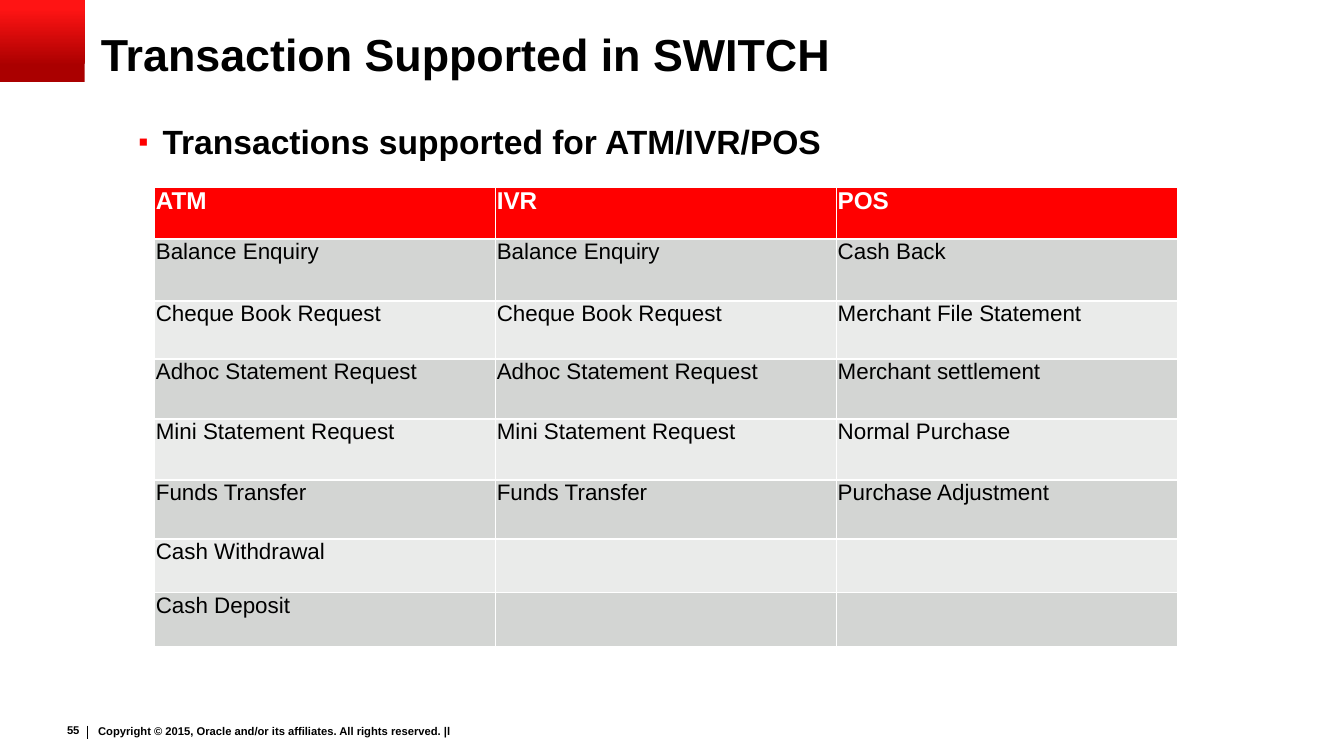
from dataclasses import dataclass

from lxml import etree
from pptx import Presentation
from pptx.dml.color import RGBColor
from pptx.enum.shapes import MSO_CONNECTOR as Connector, MSO_SHAPE as Preset
from pptx.enum.text import MSO_ANCHOR as Anchor, PP_ALIGN as Align
from pptx.oxml.ns import qn
from pptx.util import Inches, Pt


@dataclass(frozen=True)
class Theme:
    font: str = "Arial"
    text: str = "000000"
    white: str = "FFFFFF"
    accent: str = "FF0000"
    corner_dark: str = "AA0000"
    corner_bright: str = "FF1414"
    band_dark: str = "D3D5D3"
    band_light: str = "EAEBEA"
    title_size: float = 24
    body_size: float = 18
    header_size: float = 13
    cell_size: float = 12
    footer_size: float = 6


@dataclass(frozen=True)
class Box:
    left: float
    top: float
    width: float
    height: float

    def lengths(self):
        return [Inches(value) for value in (self.left, self.top, self.width, self.height)]


@dataclass(frozen=True)
class TableRow:
    height: float
    cells: tuple


THEME = Theme()
ROWS = (
    TableRow(0.39, ("ATM", "IVR", "POS")),
    TableRow(0.46, ("Balance Enquiry", "Balance Enquiry", "Cash Back")),
    TableRow(0.43, ("Cheque Book Request", "Cheque Book Request", "Merchant File Statement")),
    TableRow(0.45, ("Adhoc Statement Request", "Adhoc Statement Request", "Merchant settlement")),
    TableRow(0.45, ("Mini Statement Request", "Mini Statement Request", "Normal Purchase")),
    TableRow(0.44, ("Funds Transfer", "Funds Transfer", "Purchase Adjustment")),
    TableRow(0.4, ("Cash Withdrawal", "", "")),
    TableRow(0.4, ("Cash Deposit", "", "")),
)


def write_text(frame, text: str, *, size: float, color: str = THEME.text, bold: bool = True,
               align=Align.LEFT, line_spacing: float = 1.0, bullet: str = ""):
    paragraph = frame.paragraphs[0]
    paragraph.text = text
    paragraph.alignment = align
    paragraph.line_spacing = line_spacing
    if bullet:
        add_bullet(paragraph, bullet)
    font = paragraph.font
    font.name = THEME.font
    font.size = Pt(size)
    font.bold = bold
    font.color.rgb = RGBColor.from_string(color)
    return paragraph


def add_bullet(paragraph, character: str) -> None:
    properties = paragraph._p.get_or_add_pPr()
    properties.set("marL", str(Inches(0.25)))
    properties.set("indent", str(Inches(-0.18)))
    color = etree.SubElement(properties, qn("a:buClr"))
    etree.SubElement(color, qn("a:srgbClr"), val=THEME.accent)
    etree.SubElement(properties, qn("a:buSzPct"), val="85000")
    etree.SubElement(properties, qn("a:buFont"), typeface=THEME.font)
    etree.SubElement(properties, qn("a:buChar"), char=character)


def add_text(slide, box: Box, text: str, *, insets: tuple = (0, 0), anchor=Anchor.TOP,
             wrap: bool = True, **text_format):
    frame = slide.shapes.add_textbox(*box.lengths()).text_frame
    frame.word_wrap = wrap
    frame.vertical_anchor = anchor
    frame.margin_left = frame.margin_right = Inches(insets[0])
    frame.margin_top = frame.margin_bottom = Inches(insets[1])
    return write_text(frame, text, **text_format)


def add_corner(slide, box: Box) -> None:
    shape = slide.shapes.add_shape(Preset.RECTANGLE, *box.lengths())
    shape.shadow.inherit = False
    shape.line.fill.background()
    shape.fill.gradient()
    shape.fill.gradient_angle = 90
    stops = ((0.2, THEME.corner_dark), (0.9, THEME.corner_bright))
    for stop, (position, color) in zip(shape.fill.gradient_stops, stops):
        stop.position = position
        stop.color.rgb = RGBColor.from_string(color)


def add_divider(slide, x: float, top: float, bottom: float) -> None:
    line = slide.shapes.add_connector(
        Connector.STRAIGHT, Inches(x), Inches(top), Inches(x), Inches(bottom))
    line.line.color.rgb = RGBColor.from_string(THEME.text)
    line.line.width = Pt(0.5)
    etree.SubElement(line._element.spPr, qn("a:effectLst"))


def set_borders(cell, widths: dict) -> None:
    properties = cell._tc.get_or_add_tcPr()
    for side, width in widths.items():
        border = etree.SubElement(properties, qn(f"a:ln{side}"), w=str(Pt(width)))
        fill = etree.SubElement(border, qn("a:solidFill"))
        etree.SubElement(fill, qn("a:srgbClr"), val=THEME.white)


def add_table(slide, box: Box, rows: tuple) -> None:
    column_count = len(rows[0].cells)
    table = slide.shapes.add_table(len(rows), column_count, *box.lengths()).table
    for column in table.columns:
        column.width = Inches(box.width / column_count)
    for row_index, row in enumerate(rows):
        table.rows[row_index].height = Inches(row.height)
        header = row_index == 0
        band = THEME.band_dark if row_index % 2 else THEME.band_light
        for column_index, text in enumerate(row.cells):
            cell = table.cell(row_index, column_index)
            cell.margin_left = cell.margin_right = Inches(0.01)
            cell.margin_top = Inches(0.02)
            cell.margin_bottom = 0
            set_borders(cell, {"L": 1, "R": 1, "T": 1.5 if row_index == 1 else 1,
                               "B": 1.5 if header else 1})
            cell.fill.solid()
            cell.fill.fore_color.rgb = RGBColor.from_string(THEME.accent if header else band)
            write_text(cell.text_frame, text, bold=header, line_spacing=0.9,
                       size=THEME.header_size if header else THEME.cell_size,
                       color=THEME.white if header else THEME.text)


def main() -> None:
    presentation = Presentation()
    presentation.slide_width = Inches(10)
    presentation.slide_height = Inches(10 * 9 / 16)
    slide = presentation.slides.add_slide(presentation.slide_layouts[6])

    add_text(slide, Box(0.69, 5.37, 4.55, 0.24),
             "Copyright © 2015, Oracle and/or its affiliates. All rights reserved. |l",
             insets=(0.04, 0.02), size=THEME.footer_size)
    add_divider(slide, 0.65, 5.4, 5.5)
    add_text(slide, Box(0.39, 5.34, 0.3, 0.2), "55", insets=(0.1, 0.05), anchor=Anchor.MIDDLE,
             wrap=False, size=THEME.footer_size, align=Align.RIGHT, line_spacing=0.9)
    add_corner(slide, Box(0, 0, 0.63, 0.61))
    add_text(slide, Box(0.75, 0.23, 8.51, 0.38), "Transaction Supported in SWITCH",
             anchor=Anchor.MIDDLE, size=THEME.title_size, line_spacing=0.9)
    add_text(slide, Box(0.96, 0.9, 8.24, 0.39), "Transactions supported for ATM/IVR/POS",
             size=THEME.body_size, bullet="▪")
    add_table(slide, Box(1.15, 1.39, 7.61, 3.42), ROWS)

    presentation.save("out.pptx")


if __name__ == "__main__":
    main()
